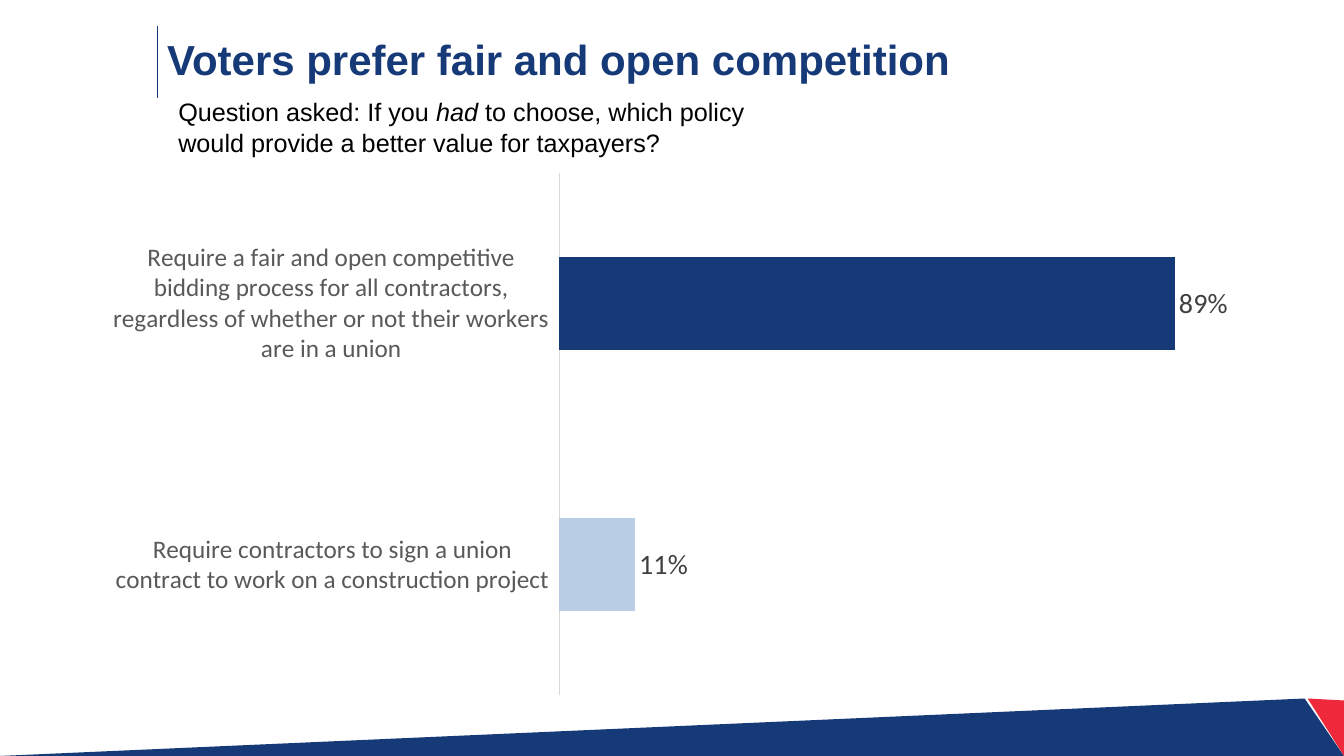
from dataclasses import dataclass

from lxml import etree
from pptx import Presentation
from pptx.chart.data import CategoryChartData
from pptx.dml.color import RGBColor
from pptx.enum.chart import XL_CHART_TYPE, XL_LABEL_POSITION, XL_TICK_LABEL_POSITION, XL_TICK_MARK
from pptx.enum.shapes import MSO_CONNECTOR
from pptx.enum.text import MSO_ANCHOR
from pptx.oxml import parse_xml
from pptx.oxml.ns import nsdecls, qn
from pptx.util import Inches, Pt

BAR = XL_CHART_TYPE.BAR_CLUSTERED
OUTSIDE = XL_LABEL_POSITION.OUTSIDE_END
LOW = XL_TICK_LABEL_POSITION.LOW
NO_TICK = XL_TICK_MARK.NONE
STRAIGHT = MSO_CONNECTOR.STRAIGHT
MIDDLE = MSO_ANCHOR.MIDDLE


@dataclass(frozen=True)
class Theme:
    navy: str = "163A78"
    red: str = "EE293C"
    pale: str = "B9CDE5"
    black: str = "000000"
    gray: str = "595959"
    dark: str = "404040"
    rule: str = "D9D9D9"
    head: str = "Arial"
    body: str = "Calibri"
    title: int = 30
    text: int = 18
    value: int = 20


THEME = Theme()
ANSWERS = [
    ("Require contractors to sign a union contract to work on a construction project", 0.11),
    ("Require a fair and open competitive bidding process for all contractors, "
     "regardless of whether or not their workers are in a union", 0.89),
]
QUESTION = [
    ("Question asked: If you ", False),
    ("had ", True),
    ("to choose, which policy would provide a better value for taxpayers?", False),
]


def color(code):
    return RGBColor.from_string(code)


def style(font, name, size, code):
    font.name = name
    font.size = Pt(size)
    font.color.rgb = color(code)


def add_piece(slide, points, code):
    spots = [(Inches(x), Inches(y)) for x, y in points]
    pen = slide.shapes.build_freeform(*spots[0])
    pen.add_line_segments(spots[1:], close=True)
    shape = pen.convert_to_shape()
    shape.shadow.inherit = False
    shape.fill.solid()
    shape.fill.fore_color.rgb = color(code)
    shape.line.fill.background()


def add_footer(slide, left, top, width, height):
    right, base = left + width, top + height
    add_piece(slide, [(left, base), (right - 0.39, top), (right, base)], THEME.navy)
    add_piece(slide, [(right - 0.36, top), (right, top + 0.02), (right, base)], THEME.red)


def add_title(slide, left, top, width, height):
    x = Inches(left)
    rule = slide.shapes.add_connector(STRAIGHT, x, Inches(top), x, Inches(top + height))
    rule.line.color.rgb = color(THEME.navy)
    rule.line.width = Pt(0.5)
    etree.SubElement(rule.element.spPr, qn("a:effectLst"))
    box = slide.shapes.add_textbox(x, Inches(top + 0.01), Inches(width), Inches(height - 0.03))
    frame = box.text_frame
    frame.word_wrap = True
    frame.vertical_anchor = MIDDLE
    frame.text = "Voters prefer fair and open competition"
    line = frame.paragraphs[0]
    line.line_spacing = 0.9
    font = line.runs[0].font
    style(font, THEME.head, THEME.title, THEME.navy)
    font.bold = True


def add_question(slide, left, top, width, height):
    box = slide.shapes.add_textbox(Inches(left), Inches(top), Inches(width), Inches(height))
    frame = box.text_frame
    frame.word_wrap = True
    for text, italic in QUESTION:
        run = frame.paragraphs[0].add_run()
        run.text = text
        style(run.font, THEME.head, THEME.text, THEME.black)
        run.font.italic = italic


def set_plot(chart, **box):
    area = chart.element.find(".//" + qn("c:plotArea"))
    for old in area.findall(qn("c:layout")):
        area.remove(old)
    sizes = "".join(f'<c:{key} val="{size}"/>' for key, size in box.items())
    area.insert(0, parse_xml(
        f'<c:layout {nsdecls("c")}><c:manualLayout><c:layoutTarget val="inner"/>'
        f'<c:xMode val="edge"/><c:yMode val="edge"/>{sizes}</c:manualLayout></c:layout>'))


def add_answers(slide, left, top, width, height):
    data = CategoryChartData(number_format="0%")
    data.categories = [name for name, share in ANSWERS]
    data.add_series("Series 1", [share for name, share in ANSWERS])
    chart = slide.shapes.add_chart(
        BAR, Inches(left), Inches(top), Inches(width), Inches(height), data).chart
    chart.has_title = False
    chart.has_legend = False
    style(chart.font, THEME.body, 10, THEME.black)

    names = chart.category_axis
    names.major_tick_mark = names.minor_tick_mark = NO_TICK
    names.tick_label_position = LOW
    names.has_major_gridlines = False
    style(names.tick_labels.font, THEME.body, THEME.text, THEME.gray)
    names.format.line.color.rgb = color(THEME.rule)
    names.format.line.width = Pt(0.75)

    scale = chart.value_axis
    scale.minimum_scale, scale.maximum_scale = 0, 1
    scale.has_major_gridlines = False
    scale.visible = False

    plot = chart.plots[0]
    plot.gap_width = 182
    plot.vary_by_categories = False
    bars = plot.series[0]
    bars.invert_if_negative = False
    for part, code in ((bars, THEME.navy), (bars.points[0], THEME.pale)):
        part.format.fill.solid()
        part.format.fill.fore_color.rgb = color(code)
    labels = bars.data_labels
    labels.show_value = True
    labels.position = OUTSIDE
    labels.number_format = "0%"
    labels.number_format_is_linked = False
    style(labels.font, THEME.body, THEME.value, THEME.dark)
    set_plot(chart, x=0.393, y=0.1, w=0.607, h=0.874)


def main():
    deck = Presentation()
    deck.slide_width, deck.slide_height = Inches(13.33), Inches(7.5)
    slide = deck.slides.add_slide(deck.slide_layouts[6])
    add_footer(slide, 0, 6.93, 13.33, 0.57)
    add_title(slide, 1.56, 0.26, 11.18, 0.71)
    add_question(slide, 1.67, 0.91, 6.51, 0.71)
    add_answers(slide, 1.1, 1.12, 11.31, 5.93)
    deck.save("out.pptx")


if __name__ == "__main__":
    main()
